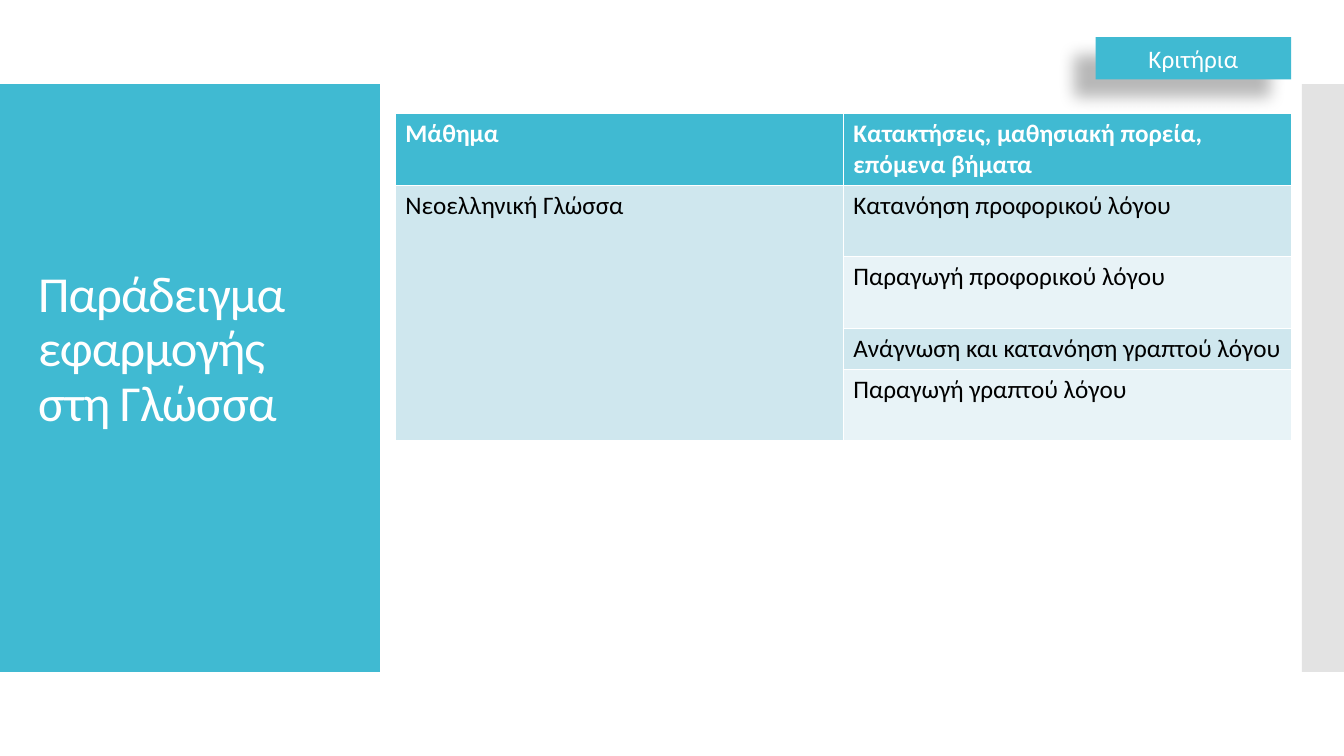
from lxml import etree
from pptx import Presentation
from pptx.dml.color import RGBColor
from pptx.enum.shapes import MSO_SHAPE as Shape
from pptx.enum.text import MSO_ANCHOR as Anchor, MSO_AUTO_SIZE as AutoSize, PP_ALIGN as Align
from pptx.oxml import parse_xml
from pptx.oxml.ns import nsdecls, qn
from pptx.util import Pt

FONT = "Calibri"
TEAL, WHITE, BLACK, GREY = "40BAD2", "FFFFFF", "000000", "C8C8C8"
BANDS = ("CFE7EE", "E8F3F7")
HEADINGS = ("Μάθημα", "Κατακτήσεις, μαθησιακή πορεία, επόμενα βήματα")
SUBJECT = "Νεοελληνική Γλώσσα"
CRITERIA = (
    "Κατανόηση προφορικού λόγου",
    "Παραγωγή προφορικού λόγου",
    "Ανάγνωση και κατανόηση γραπτού λόγου",
    "Παραγωγή γραπτού λόγου",
)
TALL_ROW, SHORT_ROW = 51.1, 29.2
ROW_HEIGHTS = (TALL_ROW, TALL_ROW, TALL_ROW, SHORT_ROW, TALL_ROW)


def paint(color_format, color):
    color_format.rgb = RGBColor.from_string(color)


def format_text(paragraph, size, color, bold=False):
    font = paragraph.font
    font.name, font.size, font.bold = FONT, Pt(size), bold
    paint(font.color, color)


def add_rectangle(slide, left, top, width, height, color):
    rectangle = slide.shapes.add_shape(
        Shape.RECTANGLE, Pt(left), Pt(top), Pt(width), Pt(height))
    rectangle.shadow.inherit = False
    rectangle.fill.solid()
    paint(rectangle.fill.fore_color, color)
    rectangle.line.fill.background()
    return rectangle


def set_opacity(shape, percent):
    color = shape.element.spPr.find(qn("a:solidFill"))[0]
    etree.SubElement(color, qn("a:alpha"), val=str(percent * 1000))


def add_soft_shadow(shape, blur, distance, angle, percent):
    effects = shape.element.spPr.find(qn("a:effectLst"))
    effects.append(parse_xml(
        f'<a:outerShdw {nsdecls("a")} blurRad="{Pt(blur)}" dist="{Pt(distance)}" '
        f'dir="{angle * 60000}" algn="ctr" rotWithShape="0"><a:srgbClr val="{BLACK}">'
        f'<a:alpha val="{percent * 1000}"/></a:srgbClr></a:outerShdw>'))


def add_title_panel(slide, left, top, width, height):
    panel = add_rectangle(slide, left, top, width, height, TEAL)
    title = slide.shapes.title
    title.element.addprevious(panel.element)
    title.left, title.top = Pt(left + 20), Pt(top + 28.8)
    title.width, title.height = Pt(width - 39.6), Pt(height - 57.6)
    frame = title.text_frame
    frame.text = "Παράδειγμα εφαρμογής στη Γλώσσα"
    frame.word_wrap, frame.auto_size = True, AutoSize.NONE
    frame.vertical_anchor = Anchor.MIDDLE
    frame.margin_bottom = Pt(43)  # lifts the text above the panel's centre
    paragraph = frame.paragraphs[0]
    paragraph.alignment, paragraph.line_spacing = Align.LEFT, 0.9
    format_text(paragraph, 36, WHITE)
    paragraph.runs[0].font._element.set("spc", "-60")


def add_criteria_tag(slide, left, top, width, height):
    tag = add_rectangle(slide, left, top, width, height, TEAL)
    add_soft_shadow(tag, 11.8, 19.7, 141, 28)
    frame = tag.text_frame
    frame.text = "Κριτήρια"
    frame.vertical_anchor = Anchor.MIDDLE
    paragraph = frame.paragraphs[0]
    paragraph.alignment = Align.CENTER
    format_text(paragraph, 18, WHITE)


def fill_cell(cell, text, fill, color, bold=False):
    cell.text = text
    cell.fill.solid()
    paint(cell.fill.fore_color, fill)
    format_text(cell.text_frame.paragraphs[0], 18, color, bold)


def add_criteria_table(slide, left, top, width):
    table = slide.shapes.add_table(
        len(ROW_HEIGHTS), len(HEADINGS),
        Pt(left), Pt(top), Pt(width), Pt(sum(ROW_HEIGHTS))).table
    for row, height in zip(table.rows, ROW_HEIGHTS):
        row.height = Pt(height)
    for column, heading in enumerate(HEADINGS):
        fill_cell(table.cell(0, column), heading, TEAL, WHITE, bold=True)
    table.cell(1, 0).merge(table.cell(len(CRITERIA), 0))
    fill_cell(table.cell(1, 0), SUBJECT, BANDS[0], BLACK)
    for index, criterion in enumerate(CRITERIA):
        fill_cell(table.cell(index + 1, 1), criterion, BANDS[index % 2], BLACK)


def main():
    presentation = Presentation()
    presentation.slide_width, presentation.slide_height = Pt(960), Pt(540)
    slide = presentation.slides.add_slide(presentation.slide_layouts[5])
    add_title_panel(slide, 0, 60, 271.4, 420)
    side_bar = add_rectangle(slide, 930, 60, 30, 420, GREY)
    set_opacity(side_bar, 50)
    add_criteria_tag(slide, 782.6, 26.6, 139.7, 30.2)
    add_criteria_table(slide, 282.4, 81.2, 640)
    presentation.save("out.pptx")


if __name__ == "__main__":
    main()
